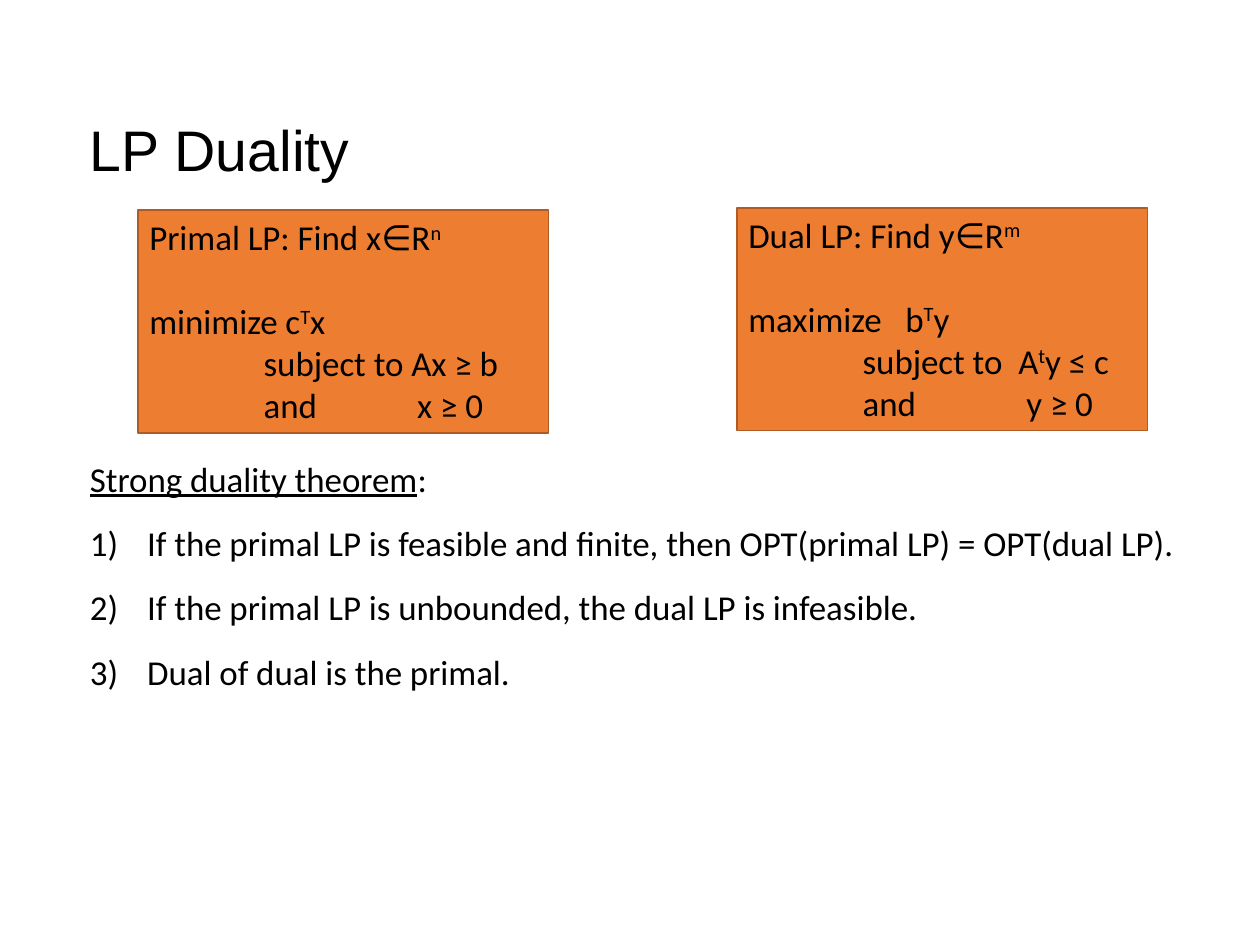
from dataclasses import dataclass

from lxml import etree
from pptx import Presentation
from pptx.dml.color import RGBColor
from pptx.enum import shapes, text
from pptx.oxml import ns
from pptx.util import Cm, Pt


@dataclass(frozen=True)
class Theme:
    ink: RGBColor = RGBColor(0, 0, 0)
    fill: RGBColor = RGBColor(0xED, 0x7D, 0x31)
    edge: RGBColor = RGBColor(0xAF, 0x5C, 0x24)
    head: str = "Arial"
    body: str = "Calibri"
    large: Pt = Pt(36)
    size: Pt = Pt(22)
    gap: Pt = Pt(14.2)
    skip: Pt = Pt(26.5)


THEME = Theme()
PRIMAL = [
    ("Primal LP: Find x∈R|n", []),
    ("minimize c|T|x", []),
    ("\tsubject to Ax ≥ b", [2.54]),
    ("\tand\tx ≥ 0", [2.54, 5.95]),
]
DUAL = [
    ("Dual LP: Find y∈R|m", []),
    ("maximize\tb|T|y", [3.49]),
    ("\tsubject to\tA|t|y ≤ c", [2.54, 6]),
    ("\tand\ty ≥ 0", [2.54, 6.18]),
]
CLAIMS = [
    "If the primal LP is feasible and finite, then OPT(primal LP) = OPT(dual LP).",
    "If the primal LP is unbounded, the dual LP is infeasible.",
    "Dual of dual is the primal.",
]


def style(para, name=THEME.body, size=THEME.size):
    para.font.name = name
    para.font.size = size
    para.font.color.rgb = THEME.ink


def lines(frame, count):
    return [frame.paragraphs[0]] + [frame.add_paragraph() for _ in range(count - 1)]


def add_text(slide, box):
    frame = slide.shapes.add_textbox(*map(Cm, box)).text_frame
    frame.word_wrap = True
    frame.margin_left = frame.margin_right = 0
    frame.margin_top = frame.margin_bottom = 0
    return frame


def add_title(slide, box, words):
    frame = add_text(slide, box)
    frame.vertical_anchor = text.MSO_ANCHOR.MIDDLE
    para = frame.paragraphs[0]
    para.text = words
    style(para, THEME.head, THEME.large)


def add_tabs(para, stops):
    tabs = etree.SubElement(para._p.get_or_add_pPr(), ns.qn("a:tabLst"))
    for stop in stops:
        etree.SubElement(tabs, ns.qn("a:tab"), pos=str(Cm(stop)), algn="l")


def add_panel(slide, box, rows):
    panel = slide.shapes.add_shape(shapes.MSO_SHAPE.RECTANGLE, *map(Cm, box))
    panel.shadow.inherit = False
    panel.fill.solid()
    panel.fill.fore_color.rgb = THEME.fill
    panel.line.color.rgb = THEME.edge
    panel.line.width = Pt(1)
    frame = panel.text_frame
    frame.word_wrap = True
    frame.vertical_anchor = text.MSO_ANCHOR.TOP
    paras = lines(frame, len(rows))
    for para, (words, stops) in zip(paras, rows):
        para.alignment = text.PP_ALIGN.LEFT
        if stops:
            add_tabs(para, stops)
        style(para)
        for place, part in enumerate(words.split("|")):
            run = para.add_run()
            run.text = part
            if place % 2:
                run._r.get_or_add_rPr().set("baseline", "30000")
    paras[1].space_before = THEME.skip


def add_claims(slide, box, head, claims):
    first, *rest = lines(add_text(slide, box), len(claims) + 1)
    label = first.add_run()
    label.text = head
    label.font.underline = True
    first.add_run().text = ":"
    for para, claim in zip(rest, claims):
        para.text = claim
        props = para._p.get_or_add_pPr()
        props.set("marL", str(Cm(1.27)))
        props.set("indent", str(Cm(-1.27)))
        etree.SubElement(props, ns.qn("a:buAutoNum"), type="arabicParenR")
    for para in [first, *rest]:
        para.space_after = THEME.gap
        style(para)


def main():
    deck = Presentation()
    deck.slide_width, deck.slide_height = Cm(28), Cm(21)
    slide = deck.slides.add_slide(deck.slide_layouts[6])
    add_title(slide, (2, 1.88, 23.5, 2.84), "LP Duality")
    add_panel(slide, (16.38, 4.62, 9.12, 4.95), DUAL)
    add_panel(slide, (3.07, 4.67, 9.12, 4.95), PRIMAL)
    add_claims(slide, (2, 10.16, 24.59, 8.48), "Strong duality theorem", CLAIMS)
    deck.save("out.pptx")


if __name__ == "__main__":
    main()
